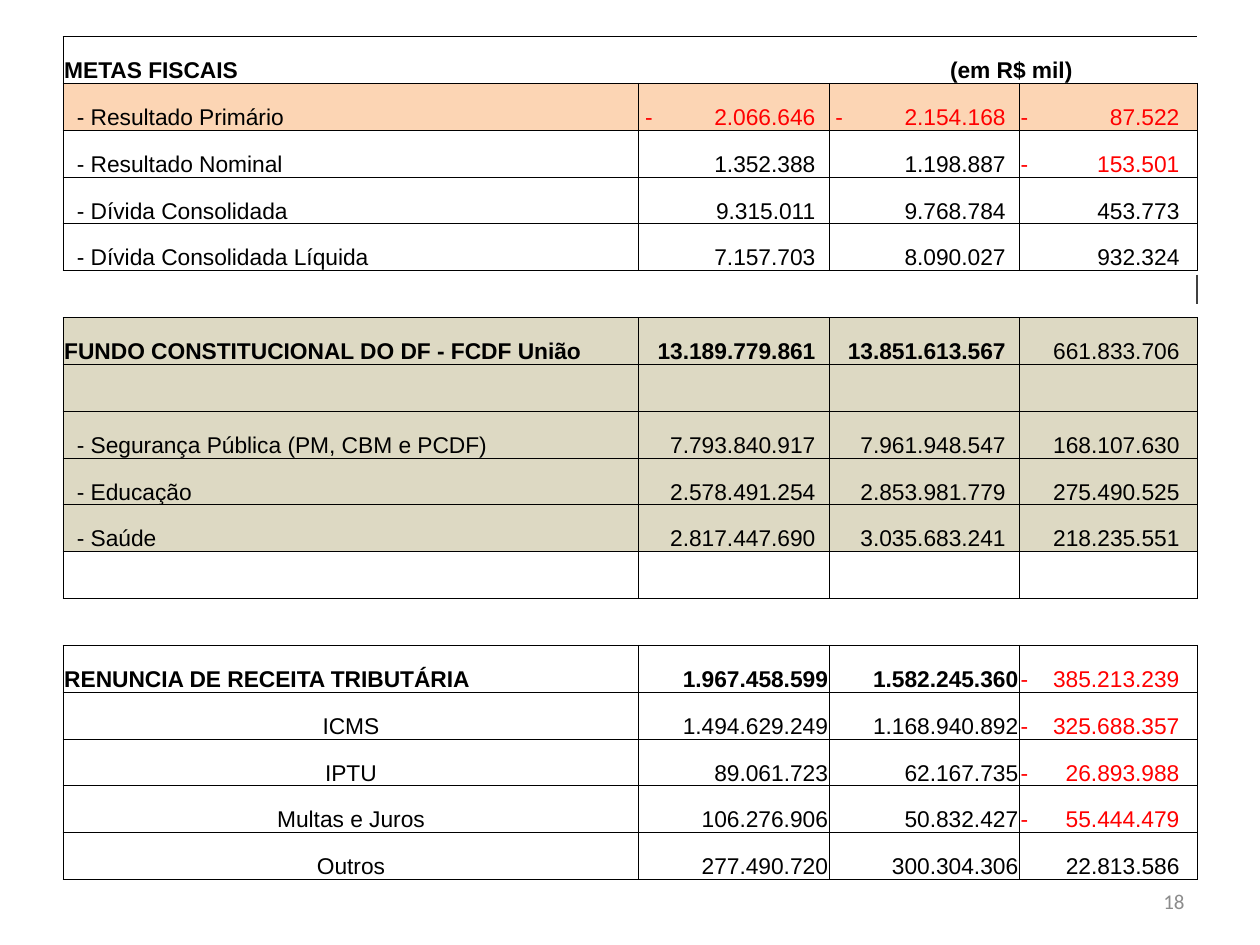
from lxml import etree
from pptx import Presentation, util as u
from pptx.dml.color import RGBColor
from pptx.enum import shapes, text
from pptx.oxml.ns import qn

COLORS = {"black": "000000", "red": "FF0000", "peach": "FCD5B4", "sand": "DDD9C3",
          "gray": "8C8C8C", "dark": "404040"}
ALIGN, ANCHOR = text.PP_ALIGN, text.MSO_ANCHOR
COLUMNS = [4.57, 1.51, 1.51, 1.41]
NUMBER_ENDS = [None, 1.4, 1.4, 1.27]
LINED, OPEN, HEADING = "LRTB", "TB", "LTB"

TARGETS = [
    ("- Resultado Primário", "-2.066.646", "-2.154.168", "-87.522"),
    ("- Resultado Nominal", "1.352.388", "1.198.887", "-153.501"),
    ("- Dívida Consolidada", "9.315.011", "9.768.784", "453.773"),
    ("- Dívida Consolidada Líquida", "7.157.703", "8.090.027", "932.324"),
]
FUND = [
    ("FUNDO CONSTITUCIONAL DO DF - FCDF União", "13.189.779.861", "13.851.613.567", "661.833.706"),
    ("",) * 4,
    ("- Segurança Pública (PM, CBM e PCDF)", "7.793.840.917", "7.961.948.547", "168.107.630"),
    ("- Educação", "2.578.491.254", "2.853.981.779", "275.490.525"),
    ("- Saúde", "2.817.447.690", "3.035.683.241", "218.235.551"),
]
WAIVERS = [
    ("RENUNCIA DE RECEITA TRIBUTÁRIA", "1.967.458.599", "1.582.245.360", "-385.213.239"),
    ("ICMS", "1.494.629.249", "1.168.940.892", "-325.688.357"),
    ("IPTU", "89.061.723", "62.167.735", "-26.893.988"),
    ("Multas e Juros", "106.276.906", "50.832.427", "-55.444.479"),
    ("Outros", "277.490.720", "300.304.306", "22.813.586"),
]
TITLES = (FUND[0][0], WAIVERS[0][0])
WAIVER_LABELS = [row[0] for row in WAIVERS]


def set_all(target, values):
    for name, value in values.items():
        setattr(target, name, value)


class FiscalPage:
    """Draws the fiscal table and its page marks in one style."""

    def __init__(self, deck):
        self.page = deck.slides.add_slide(deck.slide_layouts[6])
        self.font = {"name": "Arial", "size": u.Pt(13)}

    def color(self, name):
        return RGBColor.from_string(COLORS[name])

    def span(self, para, words, color="black", **font):
        span = para.add_run()
        span.text = words
        set_all(span.font, {**self.font, **font})
        span.font.color.rgb = self.color(color)

    def tab(self, para, position, align):
        stops = etree.SubElement(para._p.get_or_add_pPr(), qn("a:tabLst"))
        etree.SubElement(stops, qn("a:tab"), pos=str(u.Inches(position)), algn=align)

    def table(self, left, top, height, rows):
        frame = self.page.shapes.add_table(len(rows), len(COLUMNS), u.Inches(left), u.Inches(top),
                                           u.Inches(sum(COLUMNS)), u.Inches(height))
        grid = frame.table
        set_all(grid, {"first_row": False, "horz_banding": False})
        for column, width in zip(grid.columns, COLUMNS):
            column.width = u.Inches(width)
        for row in grid.rows:
            row.height = u.Inches(height / len(rows))
        for r, (edges, fill, values) in enumerate(rows):
            for c, words in enumerate(values):
                cell = grid.cell(r, c)
                self.cell(cell, edges, fill)
                if words and c:
                    self.number(cell, words, c, values[0])
                elif words:
                    self.label(cell, words)
        return grid

    def cell(self, cell, edges, fill):
        set_all(cell, {"vertical_anchor": ANCHOR.BOTTOM, "margin_left": u.Inches(0.01),
                       "margin_right": u.Inches(0.01), "margin_top": u.Inches(0.01),
                       "margin_bottom": 0})
        props = cell._tc.get_or_add_tcPr()
        for side in LINED:
            edge = etree.SubElement(props, qn("a:ln" + side), w=str(u.Pt(0.5)))
            if side in edges:
                paint = etree.SubElement(edge, qn("a:solidFill"))
                etree.SubElement(paint, qn("a:srgbClr"), val=COLORS["black"])
            else:
                etree.SubElement(edge, qn("a:noFill"))
        if fill:
            cell.fill.solid()
            cell.fill.fore_color.rgb = self.color(fill)
        else:
            cell.fill.background()

    def label(self, cell, words):
        para = cell.text_frame.paragraphs[0]
        if words.startswith("-"):
            cell.margin_left = u.Inches(0.11)
        elif words not in TITLES:
            para.alignment = ALIGN.CENTER
        self.span(para, words, bold=words in TITLES)

    def number(self, cell, words, column, label):
        para = cell.text_frame.paragraphs[0]
        last = column == len(COLUMNS) - 1
        bold = label in TITLES and not last
        end = NUMBER_ENDS[column]
        if words.startswith("-"):
            indent = 0.01 if last else 0.05
            set_all(cell, {"margin_left": u.Inches(indent), "margin_right": 0})
            self.tab(para, end - indent, "r")
            self.span(para, "-\t" + words[1:], "red", bold=bold)
            return
        para.alignment = ALIGN.RIGHT
        if last or label not in WAIVER_LABELS:
            cell.margin_right = u.Inches(COLUMNS[column] - end)
        self.span(para, words, bold=bold)

    def heading(self, grid, words, unit):
        cell = grid.cell(0, 0)
        cell.merge(grid.cell(0, len(COLUMNS) - 1))
        para = cell.text_frame.paragraphs[0]
        self.tab(para, 7.03, "l")
        self.span(para, words + "\t" + unit, bold=True)

    def page_number(self, words, *place):
        box = self.page.shapes.add_textbox(*map(u.Inches, place))
        set_all(box.text_frame, {"word_wrap": True, "vertical_anchor": ANCHOR.MIDDLE})
        para = box.text_frame.paragraphs[0]
        para.alignment = ALIGN.RIGHT
        self.span(para, words, "gray", name="Calibri", size=u.Pt(12))

    def line(self, *ends):
        mark = self.page.shapes.add_connector(shapes.MSO_CONNECTOR.STRAIGHT, *map(u.Inches, ends))
        mark.line.color.rgb = self.color("dark")
        mark.line.width = u.Pt(1.5)
        etree.SubElement(mark._element.spPr, qn("a:effectLst"))


def main():
    deck = Presentation()
    set_all(deck, {"slide_width": u.Inches(10), "slide_height": u.Inches(7.5)})
    blank = ("",) * len(COLUMNS)
    rows = [(HEADING, None, blank), (LINED, "peach", TARGETS[0])]
    rows += [(LINED, None, row) for row in TARGETS[1:]]
    rows.append((OPEN, None, blank))
    rows += [(LINED, "sand", row) for row in FUND]
    rows += [(LINED, None, blank), (OPEN, None, blank)]
    rows += [(LINED, None, row) for row in WAIVERS]
    fiscal = FiscalPage(deck)
    grid = fiscal.table(0.5, 0.29, 6.69, rows)
    fiscal.heading(grid, "METAS FISCAIS", "(em R$ mil)")
    fiscal.page_number("18", 7.17, 6.95, 2.33, 0.4)
    fiscal.line(9.5, 2.18, 9.5, 2.41)
    deck.save("out.pptx")


if __name__ == "__main__":
    main()
